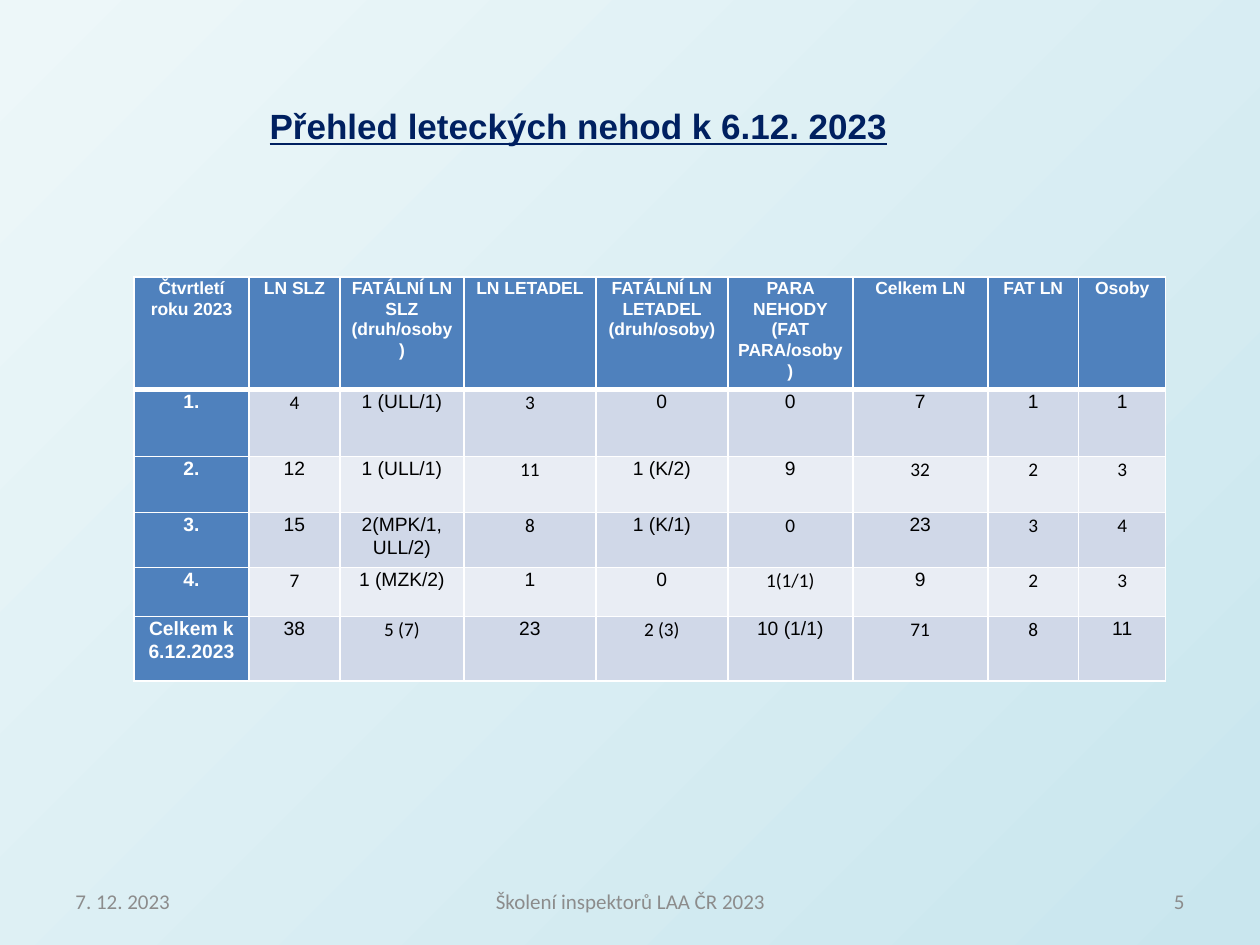
import pptx
import pptx.util
import pptx.dml.color
import pptx.enum.text
import pptx.oxml
import pptx.oxml.ns

RGBColor = pptx.dml.color.RGBColor
ALIGN = pptx.enum.text.PP_ALIGN
ANCHOR = pptx.enum.text.MSO_ANCHOR
NAVY = RGBColor(0x00, 0x20, 0x60)
BLUE = RGBColor(0x4F, 0x81, 0xBD)
BAND_DARK = RGBColor(0xD0, 0xD8, 0xE8)
BAND_LIGHT = RGBColor(0xE9, 0xED, 0xF4)
WHITE = RGBColor(0xFF, 0xFF, 0xFF)
BLACK = RGBColor(0x00, 0x00, 0x00)
GRAY = RGBColor(0x8C, 0x8C, 0x8C)
BG_START = RGBColor(0xED, 0xF7, 0xF9)
BG_END = RGBColor(0xC9, 0xE6, 0xEE)
PX = 914400 / 126


def px(n):
    return pptx.util.Emu(round(n * PX))


def put_text(tf, text, size=11, font="Arial", color=BLACK, bold=False,
             underline=False, align=ALIGN.CENTER, spacing=None, after=None):
    tf.word_wrap = True
    p = tf.paragraphs[0]
    p.text = text
    p.alignment = align
    p.line_spacing = spacing
    if after is not None:
        p.space_after = pptx.util.Pt(after)
    for r in p.runs:
        r.font.size = pptx.util.Pt(size)
        r.font.name = font
        r.font.color.rgb = color
        r.font.bold = bold
        r.font.underline = underline


prs = pptx.Presentation()
prs.slide_width, prs.slide_height = px(1260), px(945)
s = prs.slides.add_slide(prs.slide_layouts[5])

bg = s.background.fill
bg.gradient()
bg.gradient_angle = 315
for stop, color in zip(bg.gradient_stops, (BG_START, BG_END)):
    stop.color.rgb = color

title = s.shapes.title
title.left, title.top, title.width, title.height = px(257), px(100), px(700), px(52)
title.text_frame.vertical_anchor = ANCHOR.MIDDLE
put_text(title.text_frame, "Přehled leteckých nehod k 6.12. 2023", size=20,
         color=NAVY, bold=True, underline=True, align=ALIGN.LEFT)

footers = [
    (63, 294, "7. 12. 2023", ALIGN.LEFT),
    (431, 399, "Školení inspektorů LAA ČR 2023", ALIGN.CENTER),
    (903, 294, "5", ALIGN.RIGHT),
]
for left, width, text, align in footers:
    sp = s.shapes.add_textbox(px(left), px(876), px(width), px(50))
    sp.text_frame.vertical_anchor = ANCHOR.MIDDLE
    put_text(sp.text_frame, text, size=12, font="Calibri", color=GRAY, align=align)

rows = [
    ["Čtvrtletí roku 2023", "LN SLZ", "FATÁLNÍ LN SLZ (druh/osoby)", "LN LETADEL",
     "FATÁLNÍ LN LETADEL (druh/osoby)", "PARA NEHODY (FAT PARA/osoby)",
     "Celkem LN", "FAT LN", "Osoby"],
    ["1.", "4", "1 (ULL/1)", "3", "0", "0", "7", "1", "1"],
    ["2.", "12", "1 (ULL/1)", "11", "1 (K/2)", "9", "32", "2", "3"],
    ["3.", "15", "2(MPK/1,\vULL/2)", "8", "1 (K/1)", "0", "23", "3", "4"],
    ["4.", "7", "1 (MZK/2)", "1", "0", "1(1/1)", "9", "2", "3"],
    ["Celkem k 6.12.2023", "38", "5 (7)", "23", "2 (3)", "10 (1/1)", "71", "8", "11"],
]
calibri_cols = [(), (1, 3), (3, 6, 7, 8), (3, 5, 7, 8), (1, 5, 7, 8), (2, 4, 6, 7)]
col_widths = [115, 91, 124, 132, 132, 125, 135, 91, 87]
row_heights = [112, 67, 56, 55, 49, 65]

table = s.shapes.add_table(len(rows), len(col_widths), px(134), px(277),
                           px(sum(col_widths)), px(sum(row_heights))).table
for col, width in zip(table.columns, col_widths):
    col.width = px(width)
for row, height in zip(table.rows, row_heights):
    row.height = px(height)

for i, row in enumerate(rows):
    for j, text in enumerate(row):
        cell = table.cell(i, j)
        head = i == 0 or j == 0
        cell.margin_left = cell.margin_right = px(9)
        cell.margin_top = cell.margin_bottom = 0
        put_text(cell.text_frame, text, size=10 if i == 0 else 11,
                 font="Calibri" if j in calibri_cols[i] else "Arial",
                 color=WHITE if head else BLACK, bold=head, spacing=1.07, after=8)
        tcPr = cell._tc.get_or_add_tcPr()
        for side in "LRTB":
            thick = (i, side) in ((0, "B"), (1, "T"))
            tcPr.append(pptx.oxml.parse_xml(
                f'<a:ln{side} {pptx.oxml.ns.nsdecls("a")} w="{38100 if thick else 12700}">'
                f'<a:solidFill><a:srgbClr val="{WHITE}"/></a:solidFill></a:ln{side}>'))
        cell.fill.solid()
        cell.fill.fore_color.rgb = BLUE if head else BAND_DARK if i % 2 else BAND_LIGHT

prs.save("out.pptx")
